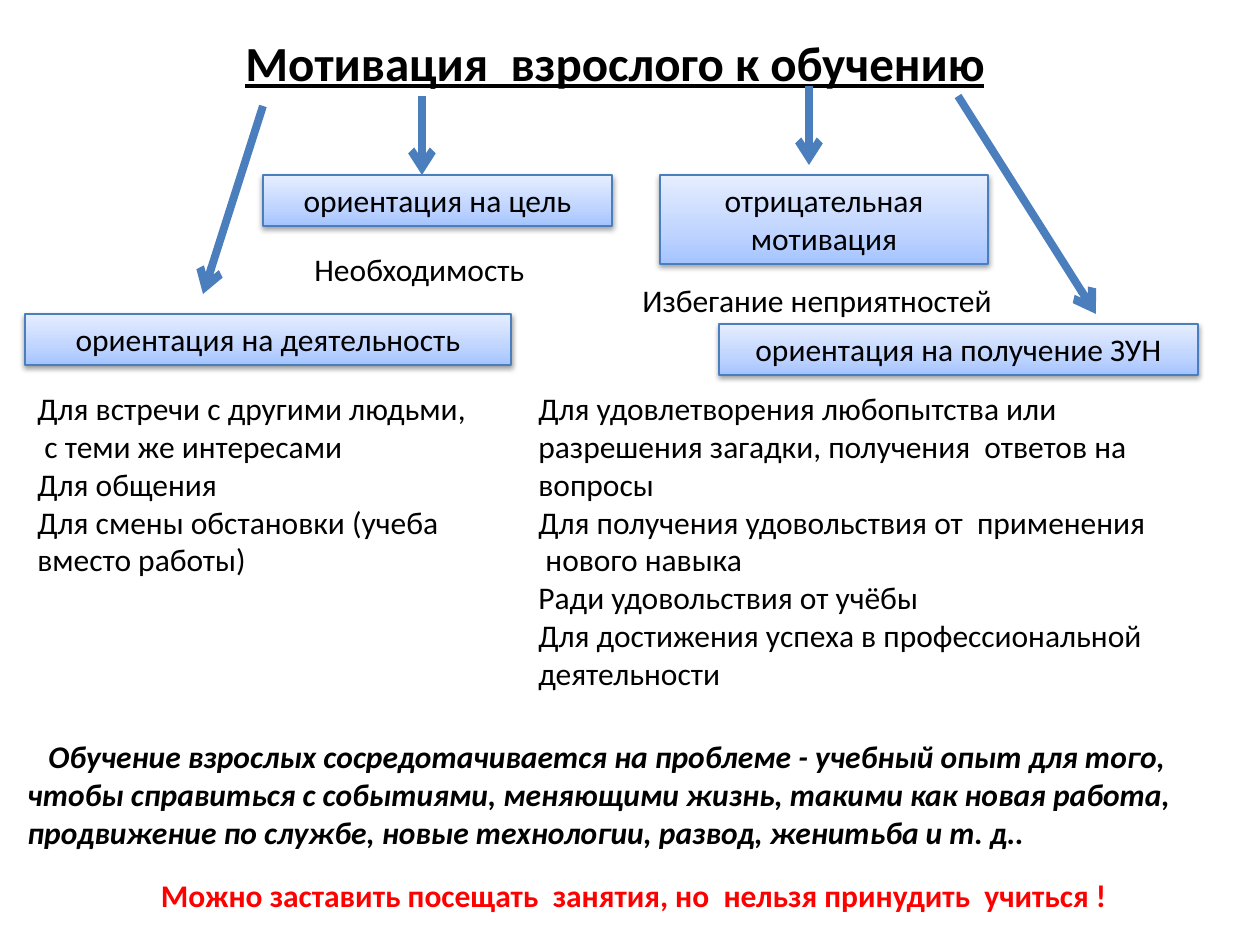
import dataclasses

import pptx
import pptx.dml.color
import pptx.enum.shapes
import pptx.enum.text
import pptx.oxml
import pptx.oxml.ns
import pptx.util

PX = 914400 / 126  # EMU in one px


@dataclasses.dataclass(frozen=True)
class Theme:
    font: str = "Calibri"
    title_size: int = 28
    body_size: int = 18
    text: str = "000000"
    accent: str = "FF0000"
    line: str = "4B7EBC"
    shadow: str = "000000"
    gradient: tuple = ((0, "A4C4FF"), (35, "BFD4FF"), (100, "E6EEFF"))
    border: float = 0.75
    arrow: float = 4.5


THEME = Theme()


def px(n):
    return pptx.util.Emu(round(n * PX))


def rgb(value):
    return pptx.dml.color.RGBColor.from_string(value)


def add_xml(parent, xml):
    ns = pptx.oxml.ns.nsdecls("a")
    tag, rest = xml[1:].split(" ", 1)
    parent.append(pptx.oxml.parse_xml(f"<{tag} {ns} {rest}"))


def set_text(sp, lines, size=THEME.body_size, color=THEME.text, wrap=True,
             center=False, bold=None, italic=None, underline=None):
    tf = sp.text_frame
    tf.text = "\n".join(lines)
    tf.word_wrap = wrap
    tf.auto_size = pptx.enum.text.MSO_AUTO_SIZE.SHAPE_TO_FIT_TEXT
    tf.vertical_anchor = pptx.enum.text.MSO_ANCHOR.TOP
    align = pptx.enum.text.PP_ALIGN
    for p in tf.paragraphs:
        p.alignment = align.CENTER if center else align.LEFT
        for r in p.runs:
            f = r.font
            f.name, f.size = THEME.font, pptx.util.Pt(size)
            f.color.rgb = rgb(color)
            f.bold, f.italic, f.underline = bold, italic, underline


def add_text(s, box, *lines, **style):
    sp = s.shapes.add_textbox(*map(px, box))
    set_text(sp, lines, **style)
    return sp


def add_motive(s, box, label):
    """Gradient box with a soft shadow that names one kind of motivation."""
    rect = pptx.enum.shapes.MSO_SHAPE.RECTANGLE
    sp = s.shapes.add_shape(rect, *map(px, box))
    sp.fill.gradient()
    sp.fill.gradient_angle = 90
    stops = sp.fill.gradient_stops[0]._gs.getparent()
    for gs in list(stops):
        stops.remove(gs)
    for pos, color in THEME.gradient:
        add_xml(stops, f'<a:gs pos="{pos * 1000}"><a:srgbClr val="{color}"/></a:gs>')
    sp.line.color.rgb = rgb(THEME.line)
    sp.line.width = pptx.util.Pt(THEME.border)
    sp.shadow.inherit = False
    effects = sp._element.spPr.find(pptx.oxml.ns.qn("a:effectLst"))
    add_xml(effects, '<a:outerShdw blurRad="40000" dist="20000" dir="5400000" rotWithShape="0">'
                     f'<a:srgbClr val="{THEME.shadow}"><a:alpha val="38000"/></a:srgbClr>'
                     '</a:outerShdw>')
    set_text(sp, [label], center=True)


def add_arrow(s, *ends):
    straight = pptx.enum.shapes.MSO_CONNECTOR.STRAIGHT
    c = s.shapes.add_connector(straight, *map(px, ends))
    c.line.color.rgb = rgb(THEME.line)
    c.line.width = pptx.util.Pt(THEME.arrow)
    add_xml(c.line._get_or_add_ln(), '<a:tailEnd type="arrow"/>')
    add_xml(c._element.spPr, '<a:effectLst />')


def main():
    prs = pptx.Presentation()
    prs.slide_width, prs.slide_height = px(1260), px(945)
    s = prs.slides.add_slide(prs.slide_layouts[6])

    # Kinds of motivation
    for box, label in (
        ((263, 175, 349, 51), "ориентация на цель"),
        ((25, 314, 486, 51), "ориентация на деятельность"),
        ((719, 324, 479, 51), "ориентация на получение ЗУН"),
        ((660, 175, 328, 89), "отрицательная мотивация"),
    ):
        add_motive(s, box, label)

    # Title and the arrows that fan out from it
    add_text(s, (233, 26, 774, 72), "Мотивация  взрослого к обучению",
             size=THEME.title_size, wrap=False, bold=True, underline=True)
    for ends in ((958, 96, 1096, 314), (263, 106, 203, 294),
                 (422, 96, 422, 175), (809, 86, 809, 165)):
        add_arrow(s, *ends)

    # Reasons behind each kind
    add_text(s, (302, 244, 244, 51), "Необходимость", wrap=False)
    add_text(s, (630, 275, 379, 51), "Избегание неприятностей", wrap=False)
    add_text(s, (25, 383, 504, 204),
             "Для встречи с другими людьми,",
             " с теми же интересами",
             "Для общения",
             "Для смены обстановки (учеба вместо работы)")
    add_text(s, (526, 383, 734, 318),
             "Для удовлетворения любопытства или",
             "разрешения загадки, получения  ответов на вопросы",
             "Для получения удовольствия от  применения",
             " нового навыка",
             "Ради удовольствия от учёбы",
             "Для достижения успеха в профессиональной  деятельности")

    # Conclusion with an indented first line, then the closing motto
    summary = add_text(
        s, (15, 731, 1230, 127),
        "Обучение взрослых сосредотачивается на проблеме - учебный опыт для того, "
        "чтобы справиться с событиями, меняющими жизнь, такими как новая работа, "
        "продвижение по службе, новые технологии, развод, женитьба и т. д..",
        bold=True, italic=True)
    summary.text_frame.paragraphs[0]._p.get_or_add_pPr().set("indent", str(px(21)))
    add_text(s, (123, 870, 1022, 51),
             "Можно заставить посещать  занятия, но  нельзя принудить  учиться !",
             color=THEME.accent, center=True, bold=True)

    prs.save("out.pptx")


if __name__ == "__main__":
    main()
